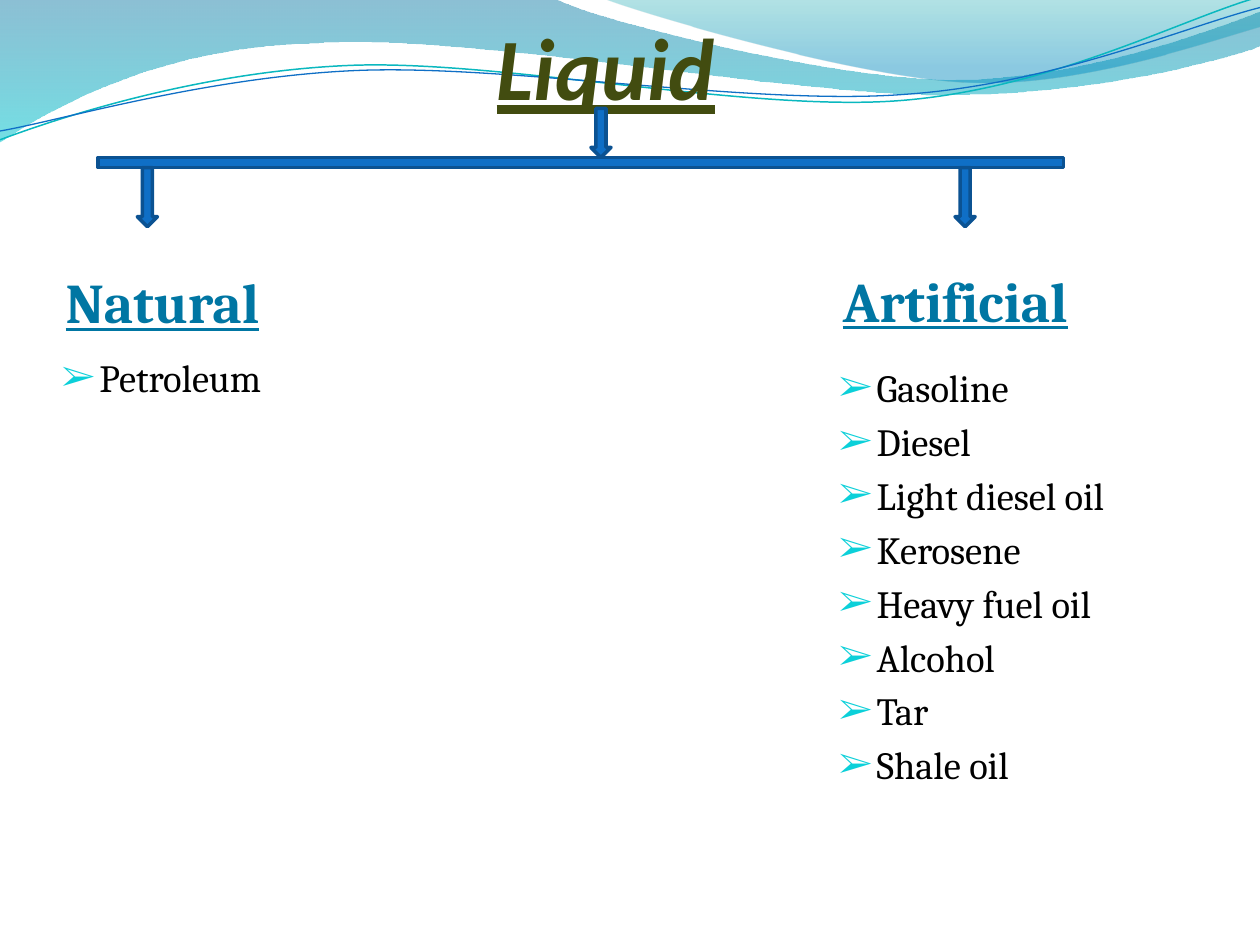
from dataclasses import dataclass

from lxml import etree
from pptx import Presentation
from pptx import util as u
from pptx.dml.color import RGBColor
from pptx.enum import shapes, text
from pptx.oxml.ns import qn


@dataclass(frozen=True)
class Theme:
    title_font: str = "Calibri"
    body_font: str = "Cambria"
    title_size: int = 50
    heading_size: int = 32
    item_size: int = 22
    title: str = "424C10"
    heading: str = "0076A3"
    item: str = "000000"
    bullet: str = "0BD0D9"
    branch: str = "0F6FC6"
    branch_edge: str = "0B5292"
    thin_wave: str = "0AB8BF"
    # Gradient stops: position in percent, colour, opacity in percent
    wide_wave: tuple = ((0, "0074A1", 45), (100, "00C6CF", 55))
    corner_wave: tuple = ((0, "00A1A9", 30), (80, "008BBF", 45))


THEME = Theme()

# Each segment holds one end point (line) or two controls and an end point (curve).
WIDE_WAVE = [
    (4.4, -0.01), (4.76, 0.17, 6.64, 0.63, 7.58, 0.63),
    (8.53, 0.63, 9.58, 0.26, 10, 0.09), (10.01, 0.36),
    (9.83, 0.44, 8.7, 0.76, 7.46, 0.75), (6.22, 0.75, 3.82, 0.28, 2.57, 0.34),
    (1.29, 0.36, 0.46, 0.83, -0.01, 1.13), (0, 0),
]
CORNER_WAVE = [
    (5.09, 0.11, 6.82, 0.62, 7.69, 0.65), (8.56, 0.69, 9.61, 0.32, 10, 0.21),
    (10, 0), (4.79, -0.01),
]
TEAL_LINE = [
    (0.48, 0.93, 1.58, 0.57, 2.77, 0.52), (3.95, 0.47, 5.93, 0.89, 7.13, 0.8),
    (8.33, 0.71, 9.38, 0.15, 9.98, -0.02),
]
BLUE_LINE = [
    (0.47, 0.96, 1.64, 0.61, 2.83, 0.56), (4.03, 0.51, 5.97, 0.84, 7.17, 0.75),
    (8.36, 0.67, 9.41, 0.21, 10, 0.06),
]

# Heading, its box, list position, items
GROUPS = [
    ("Natural", (0.47, 2.03, 4.42, 0.72), (0.39, 2.81), ["Petroleum"]),
    ("Artificial", (6.64, 2.03, 4.42, 0.7), (6.56, 2.89),
     ["Gasoline", "Diesel", "Light diesel oil", "Kerosene",
      "Heavy fuel oil", "Alcohol", "Tar", "Shale oil"]),
]
LIST_SIZE = (4.42, 4.32)


def rgb(value):
    return RGBColor.from_string(value)


def add_outline(slide, start, segments, close):
    """Build the outline through its end points, then bend the curved segments."""
    builder = slide.shapes.build_freeform(u.Inches(start[0]), u.Inches(start[1]))
    ends = [(u.Inches(x), u.Inches(y)) for *_, x, y in segments]
    builder.add_line_segments(ends, close=close)
    outline = builder.convert_to_shape()
    outline.shadow.inherit = False
    for step, segment in zip(list(outline.element.iter(qn("a:lnTo"))), segments):
        if len(segment) == 2:
            continue
        step.tag = qn("a:cubicBezTo")
        for index in (0, 1):
            x, y = segment[2 * index:2 * index + 2]
            control = etree.Element(qn("a:pt"))
            control.set("x", str(u.Inches(x) - outline.left))
            control.set("y", str(u.Inches(y) - outline.top))
            step.insert(index, control)
    return outline


def add_wave(slide, start, segments, stops):
    wave = add_outline(slide, start, segments, close=True)
    wave.line.fill.background()
    wave.fill.gradient()
    wave.fill.gradient_angle = 270
    for stop, (position, color, _) in zip(wave.fill.gradient_stops, stops):
        stop.position = position / 100
        stop.color.rgb = rgb(color)
    for tint, (_, _, opacity) in zip(wave.element.spPr.iter(qn("a:srgbClr")), stops):
        etree.SubElement(tint, qn("a:alpha")).set("val", str(opacity * 1000))


def add_wave_line(slide, start, segments, color, width):
    curve = add_outline(slide, start, segments, close=False)
    curve.fill.background()
    curve.line.color.rgb = rgb(color)
    curve.line.width = u.Pt(width)


def add_branch(slide, kind, left, top, width, height):
    branch = slide.shapes.add_shape(kind, *map(u.Inches, (left, top, width, height)))
    branch.shadow.inherit = False
    branch.fill.solid()
    branch.fill.fore_color.rgb = rgb(THEME.branch)
    branch.line.color.rgb = rgb(THEME.branch_edge)
    branch.line.width = u.Pt(2)


def add_frame(slide, box, margins, anchor):
    frame = slide.shapes.add_textbox(*map(u.Inches, box)).text_frame
    frame.word_wrap = True
    frame.auto_size = text.MSO_AUTO_SIZE.NONE
    frame.vertical_anchor = anchor
    (frame.margin_left, frame.margin_top,
     frame.margin_right, frame.margin_bottom) = map(u.Inches, margins)
    return frame


def add_run(paragraph, words, font, size, color, bold=False, italic=False):
    """Add a run; bold text on this slide is also underlined."""
    run = paragraph.add_run()
    run.text = words
    run.font.name = font
    run.font.size = u.Pt(size)
    run.font.color.rgb = rgb(color)
    run.font.bold = run.font.underline = bold
    run.font.italic = italic


def add_bullet(paragraph):
    props = paragraph._p.get_or_add_pPr()
    props.set("marL", str(u.Inches(0.3)))
    props.set("indent", str(-u.Inches(0.3)))
    color = etree.SubElement(props, qn("a:buClr"))
    etree.SubElement(color, qn("a:srgbClr")).set("val", THEME.bullet)
    etree.SubElement(props, qn("a:buSzPct")).set("val", "95000")
    etree.SubElement(props, qn("a:buFont")).set("typeface", THEME.body_font)
    etree.SubElement(props, qn("a:buChar")).set("char", "➢")


def add_title(slide, words):
    frame = add_frame(slide, (0.31, 0, 9, 0.94), (0, 0.05, 0, 0), text.MSO_ANCHOR.BOTTOM)
    paragraph = frame.paragraphs[0]
    paragraph.alignment = text.PP_ALIGN.CENTER
    add_run(paragraph, words, THEME.title_font, THEME.title_size, THEME.title,
            bold=True, italic=True)


def add_heading(slide, words, box):
    frame = add_frame(slide, box, (0.05, 0, 0.05, 0), text.MSO_ANCHOR.MIDDLE)
    paragraph = frame.paragraphs[0]
    paragraph.space_before = u.Pt(0.2 * THEME.heading_size)
    add_run(paragraph, words, THEME.body_font, THEME.heading_size, THEME.heading, bold=True)


def add_list(slide, items, place):
    frame = add_frame(slide, (*place, *LIST_SIZE), (0.1, 0, 0.1, 0.05), text.MSO_ANCHOR.TOP)
    for index, item in enumerate(items):
        paragraph = frame.add_paragraph() if index else frame.paragraphs[0]
        paragraph.space_before = u.Pt(0.2 * THEME.item_size)
        add_bullet(paragraph)
        add_run(paragraph, item, THEME.body_font, THEME.item_size, THEME.item)


def main():
    deck = Presentation()
    deck.slide_width, deck.slide_height = u.Inches(10), u.Inches(7.5)
    slide = deck.slides.add_slide(deck.slide_layouts[6])

    add_wave(slide, (0, 0), WIDE_WAVE, THEME.wide_wave)
    add_wave(slide, (4.79, -0.01), CORNER_WAVE, THEME.corner_wave)
    add_wave_line(slide, (0, 1.11), TEAL_LINE, THEME.thin_wave, 0.85)
    add_wave_line(slide, (0, 1.04), BLUE_LINE, THEME.branch, 0.75)

    add_title(slide, "Liquid")
    for heading, heading_box, list_place, items in GROUPS:
        add_heading(slide, heading, heading_box)
        add_list(slide, items, list_place)

    add_branch(slide, shapes.MSO_SHAPE.RECTANGLE, 0.78, 1.25, 7.66, 0.08)
    for left, top, height in ((1.09, 1.33, 0.47), (7.58, 1.33, 0.47), (4.69, 0.86, 0.39)):
        add_branch(slide, shapes.MSO_SHAPE.DOWN_ARROW, left, top, 0.16, height)

    deck.save("out.pptx")


if __name__ == "__main__":
    main()
